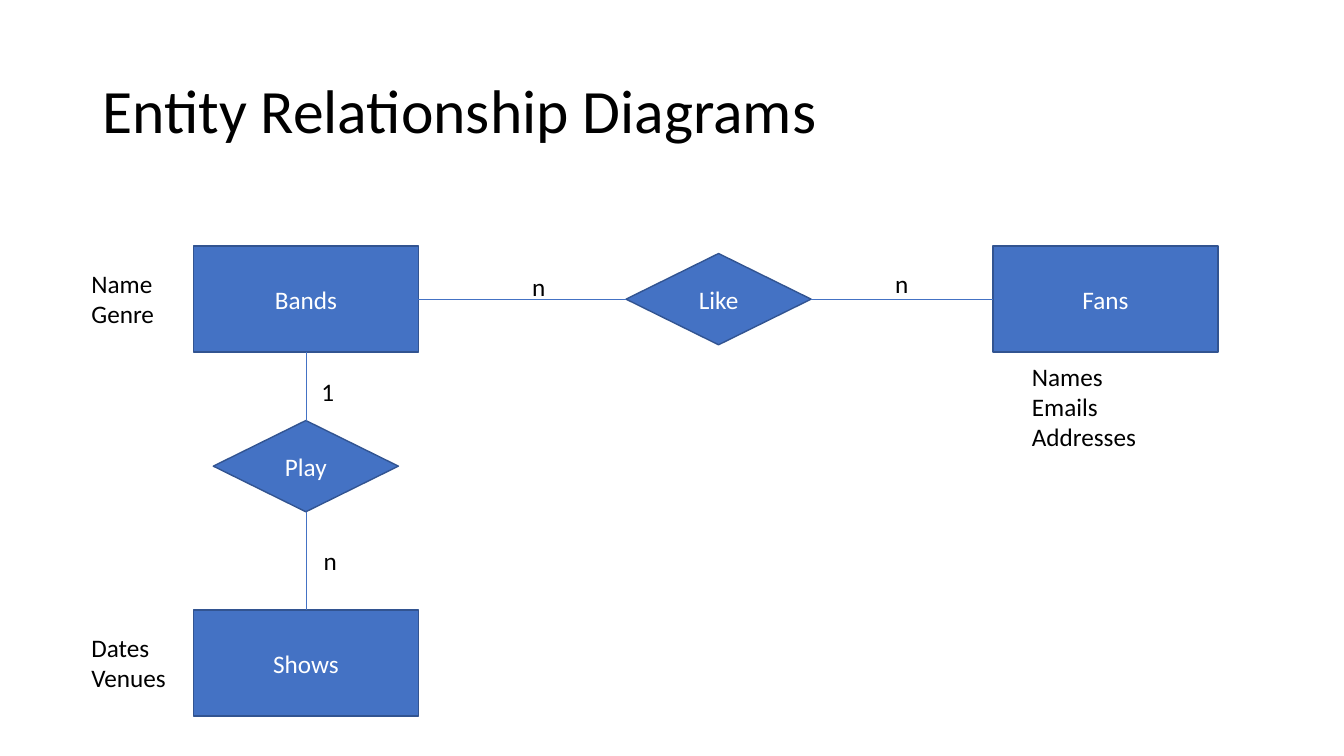
"""Build the entity relationship diagram slide for bands, fans and shows."""
from lxml import etree
from pptx import Presentation
from pptx import util as u
from pptx.dml.color import RGBColor
from pptx.enum import shapes, text
from pptx.oxml.ns import qn

COLOURS = {"fill": "4472C4", "edge": "325491", "light": "FFFFFF", "dark": "000000"}
FONT = "Calibri"
SLIDE_SIZE = (960, 540)
TITLE = ("Entity Relationship Diagrams", (66, 28.75, 828, 104.4))

KINDS = {
    "entity": (shapes.MSO_SHAPE.RECTANGLE, 160.8, 75.8),
    "relation": (shapes.MSO_SHAPE.DIAMOND, 132.2, 65.2),
}
COLUMNS = {"left": 218.5, "middle": 513.3, "right": 789.6}
ROWS = {"top": 213.7, "middle": 333, "bottom": 473.6}
NODES = {
    "Bands": ("entity", "left", "top"),
    "Fans": ("entity", "right", "top"),
    "Shows": ("entity", "left", "bottom"),
    "Like": ("relation", "middle", "top"),
    "Play": ("relation", "left", "middle"),
}
LINKS = [("Bands", "Play", 0), ("Play", "Shows", 0),
         ("Bands", "Like", 14.4), ("Like", "Fans", 0)]
LABELS = [
    (["n"], 373, 190.2, 24.3),
    (["n"], 632.3, 188, 24.3),
    (["1"], 222.5, 265, 24.3),
    (["n"], 224, 386, 24.3),
    (["Name", "Genre"], 58.2, 188.2, 60),
    (["Dates", "Venues"], 58.2, 448, 68.4),
    (["Names", "Emails", "Addresses"], 730, 254.2, 90),
]
LINE_HEIGHT, LABEL_PADDING = 21.8, 7.2


def colour(name):
    return RGBColor.from_string(COLOURS[name])


def points(*values):
    return [u.Pt(value) for value in values]


def apply(target, values):
    for name, value in values.items():
        setattr(target, name, value)


def write(box, lines, size, ink, frame_format, paragraph_format):
    frame = box.text_frame
    apply(frame, frame_format)
    for index, line in enumerate(lines):
        para = frame.add_paragraph() if index else frame.paragraphs[0]
        apply(para, paragraph_format)
        span = para.add_run()
        span.text = line
        apply(span.font, {"name": FONT, "size": u.Pt(size)})
        span.font.color.rgb = colour(ink)


def add_node(page, name):
    kind, column, row = NODES[name]
    preset, width, height = KINDS[kind]
    left, top = COLUMNS[column] - width / 2, ROWS[row] - height / 2
    box = page.shapes.add_shape(preset, *points(left, top, width, height))
    box.shadow.inherit = False
    box.fill.solid()
    box.fill.fore_color.rgb = colour("fill")
    box.line.color.rgb = colour("edge")
    box.line.width = u.Pt(1)
    write(box, [name], 18, "light",
          {"word_wrap": True, "vertical_anchor": text.MSO_ANCHOR.MIDDLE},
          {"alignment": text.PP_ALIGN.CENTER})


def add_link(page, start, end, overlap):
    start_kind, start_column, start_row = NODES[start]
    end_kind, end_column, end_row = NODES[end]
    _, start_width, start_height = KINDS[start_kind]
    _, end_width, end_height = KINDS[end_kind]
    x1, y1 = COLUMNS[start_column], ROWS[start_row]
    x2, y2 = COLUMNS[end_column], ROWS[end_row]
    if start_row == end_row:
        x1, x2 = x1 + start_width / 2 - overlap, x2 - end_width / 2
    else:
        y1, y2 = y1 + start_height / 2 - overlap, y2 - end_height / 2
    link = page.shapes.add_connector(
        shapes.MSO_CONNECTOR.STRAIGHT, *points(x1, y1, x2, y2))
    link.line.color.rgb = colour("fill")
    link.line.width = u.Pt(0.5)
    etree.SubElement(link._element.spPr, qn("a:effectLst"))


def add_label(page, lines, left, top, width):
    height = LINE_HEIGHT * len(lines) + LABEL_PADDING
    box = page.shapes.add_textbox(*points(left, top, width, height))
    write(box, lines, 18, "dark",
          {"word_wrap": False, "auto_size": text.MSO_AUTO_SIZE.SHAPE_TO_FIT_TEXT}, {})


def main():
    deck = Presentation()
    deck.slide_width, deck.slide_height = points(*SLIDE_SIZE)
    page = deck.slides.add_slide(deck.slide_layouts[6])
    heading, place = TITLE
    write(page.shapes.add_textbox(*points(*place)), [heading], 44, "dark",
          {"word_wrap": True, "vertical_anchor": text.MSO_ANCHOR.MIDDLE},
          {"line_spacing": 0.9})
    for name in NODES:
        add_node(page, name)
    for link in LINKS:
        add_link(page, *link)
    for label in LABELS:
        add_label(page, *label)
    deck.save("out.pptx")


if __name__ == "__main__":
    main()
